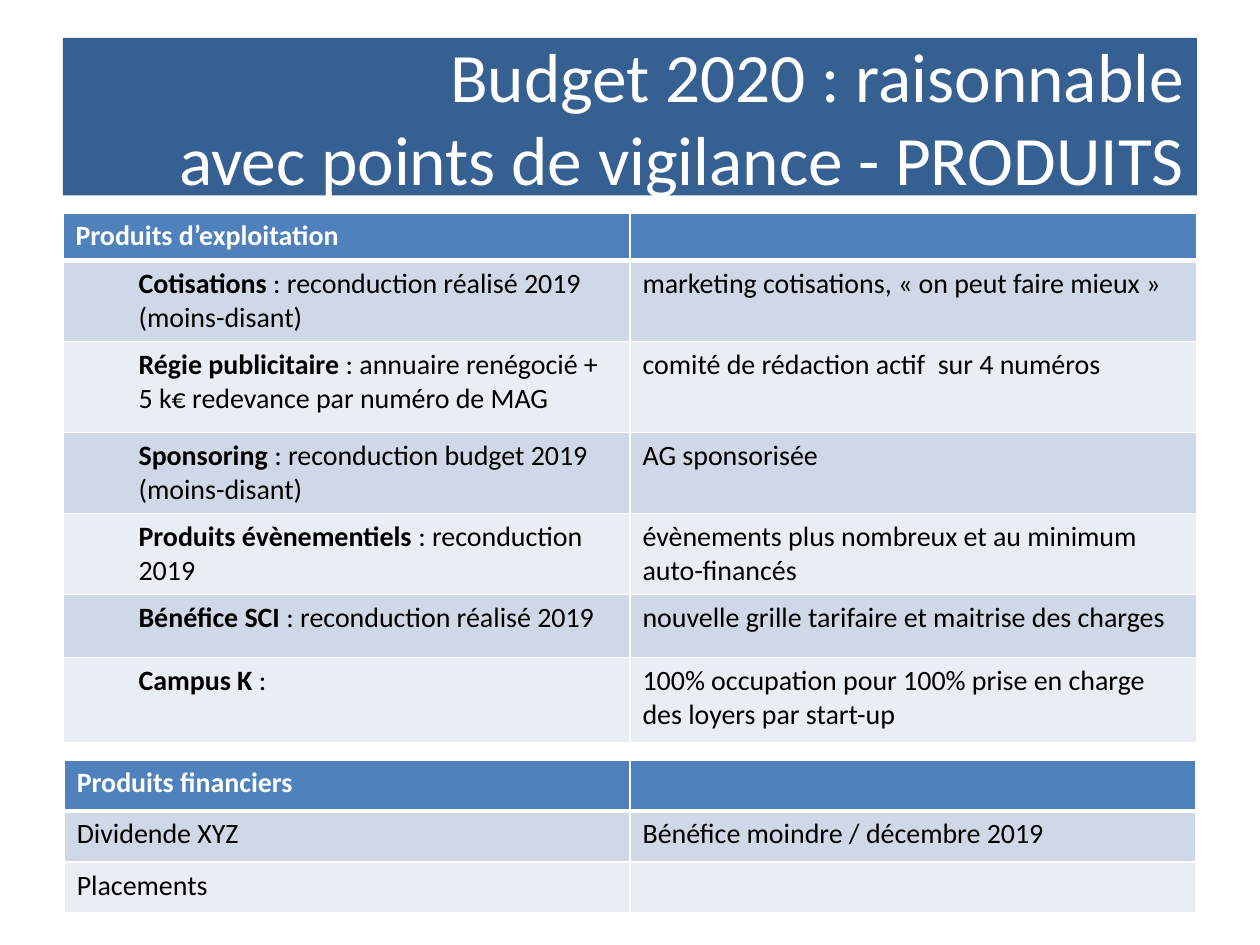
from pptx import Presentation
from pptx.dml.color import RGBColor
from pptx.enum.shapes import MSO_SHAPE
from pptx.enum.text import MSO_ANCHOR, PP_ALIGN
from pptx.oxml.ns import qn
from pptx.util import Pt
from lxml import etree

RECTANGLE = MSO_SHAPE.RECTANGLE
MIDDLE = MSO_ANCHOR.MIDDLE
RIGHT = PP_ALIGN.RIGHT

WHITE = RGBColor(0xFF, 0xFF, 0xFF)
BLACK = RGBColor(0x00, 0x00, 0x00)
NAVY = RGBColor(0x37, 0x60, 0x92)
HEADER_BLUE = RGBColor(0x4F, 0x81, 0xBD)
BANDS = (RGBColor(0xE9, 0xED, 0xF4), RGBColor(0xD0, 0xD8, 0xE8))
FONT = "Calibri"

TITLE = "Budget 2020 : raisonnable\vavec points de vigilance - PRODUITS"

OPERATING = [
    (("Produits d’exploitation", ""), ""),
    (("Cotisations", " : reconduction réalisé 2019 (moins-disant)"),
     "marketing cotisations, « on peut faire mieux »"),
    (("Régie publicitaire ", ": annuaire renégocié + 5 k€ redevance par numéro de MAG"),
     "comité de rédaction actif  sur 4 numéros"),
    (("Sponsoring", " : reconduction budget 2019 (moins-disant)"),
     "AG sponsorisée"),
    (("Produits évènementiels ", ": reconduction 2019"),
     "évènements plus nombreux et au minimum auto-financés"),
    (("Bénéfice SCI ", ": reconduction réalisé 2019"),
     "nouvelle grille tarifaire et maitrise des charges"),
    (("Campus K", " :"),
     "100% occupation pour 100% prise en charge des loyers par start-up"),
]
OPERATING_HEIGHTS = [27, 46.3, 52, 46.3, 46.3, 36, 49]

FINANCIAL = [
    (("Produits financiers", ""), ""),
    (("", "Dividende XYZ"), "Bénéfice moindre / décembre 2019"),
    (("", "Placements"), ""),
]
FINANCIAL_HEIGHTS = [29.2] * 3


def format_run(r, size, color, bold=False):
    r.font.name = FONT
    r.font.size = Pt(size)
    r.font.bold = bold
    r.font.color.rgb = color


def add_title(s):
    sp = s.shapes.add_shape(RECTANGLE, Pt(36), Pt(21.6), Pt(648), Pt(90))
    sp.shadow.inherit = False
    sp.fill.solid()
    sp.fill.fore_color.rgb = NAVY
    sp.line.fill.background()
    tf = sp.text_frame
    tf.text = TITLE
    tf.word_wrap = True
    tf.vertical_anchor = MIDDLE
    p = tf.paragraphs[0]
    p.alignment = RIGHT
    for r in p.runs:
        format_run(r, 39.6, WHITE)


def set_borders(cell, top, bottom):
    tc_pr = cell._tc.get_or_add_tcPr()
    for side, width in (("L", 1), ("R", 1), ("T", top), ("B", bottom)):
        line = etree.SubElement(tc_pr, qn(f"a:ln{side}"), w=str(Pt(width)))
        fill = etree.SubElement(line, qn("a:solidFill"))
        etree.SubElement(fill, qn("a:srgbClr"), val=str(WHITE))


def fill_cell(cell, parts, row, indent):
    set_borders(cell, 3 if row == 1 else 1, 3 if row == 0 else 1)
    cell.fill.solid()
    cell.fill.fore_color.rgb = BANDS[row % 2] if row else HEADER_BLUE
    p = cell.text_frame.paragraphs[0]
    if indent:
        p._p.get_or_add_pPr().set("marL", str(Pt(indent)))
    for text, bold in zip(parts, (True, False)):
        if text:
            r = p.add_run()
            r.text = text
            format_run(r, 16, BLACK if row else WHITE, bold)
    if not p.runs:
        cell.margin_top = cell.margin_bottom = 0


def add_budget_table(s, rows, heights, left, top, width, indent=0):
    frame = s.shapes.add_table(len(rows), 2, Pt(left), Pt(top), Pt(width), Pt(sum(heights)))
    table = frame.table
    for column in table.columns:
        column.width = Pt(width / 2)
    for i, (label, comment) in enumerate(rows):
        table.rows[i].height = Pt(heights[i])
        fill_cell(table.cell(i, 0), label, i, indent if i else 0)
        fill_cell(table.cell(i, 1), ("", comment), i, 0)


def main():
    prs = Presentation()
    prs.slide_width, prs.slide_height = Pt(720), Pt(540)
    s = prs.slides.add_slide(prs.slide_layouts[6])
    add_title(s)
    add_budget_table(s, OPERATING, OPERATING_HEIGHTS, 36, 121.7, 648, indent=36)
    add_budget_table(s, FINANCIAL, FINANCIAL_HEIGHTS, 36.7, 434.2, 646.6)
    prs.save("out.pptx")


if __name__ == "__main__":
    main()
